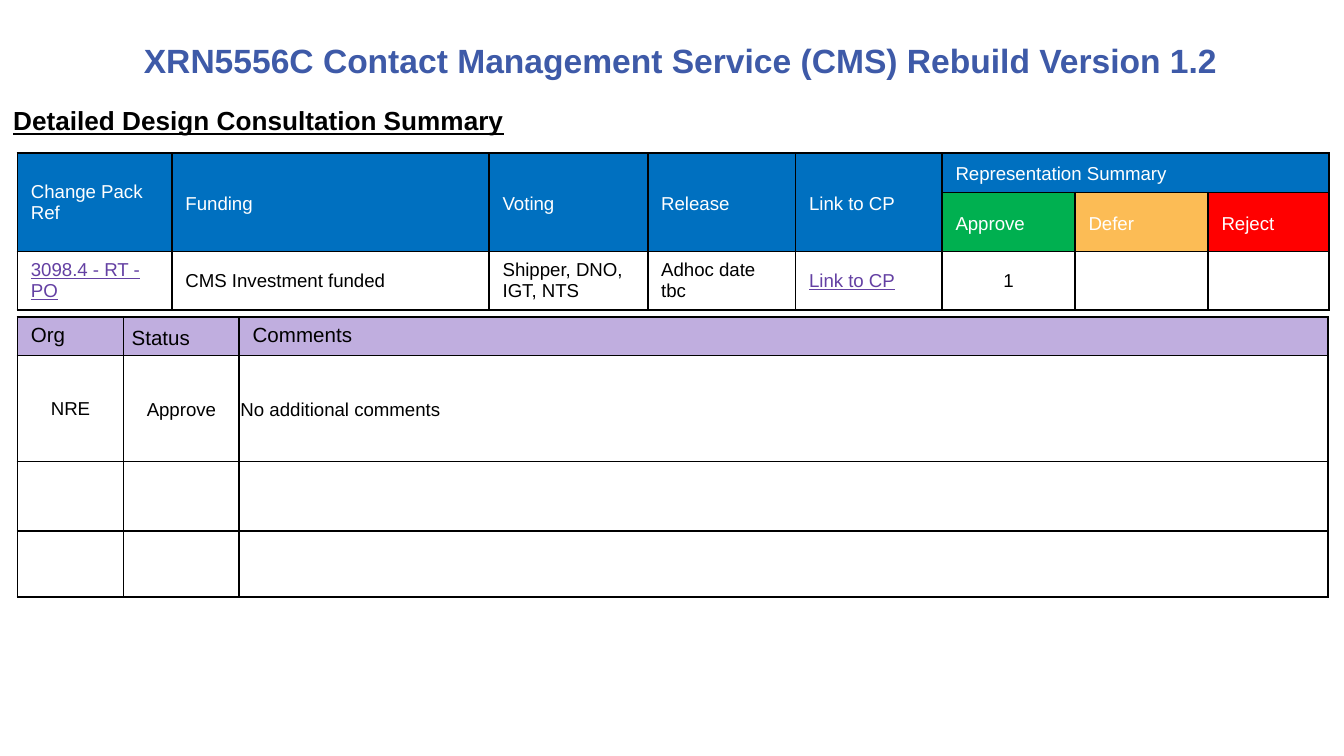
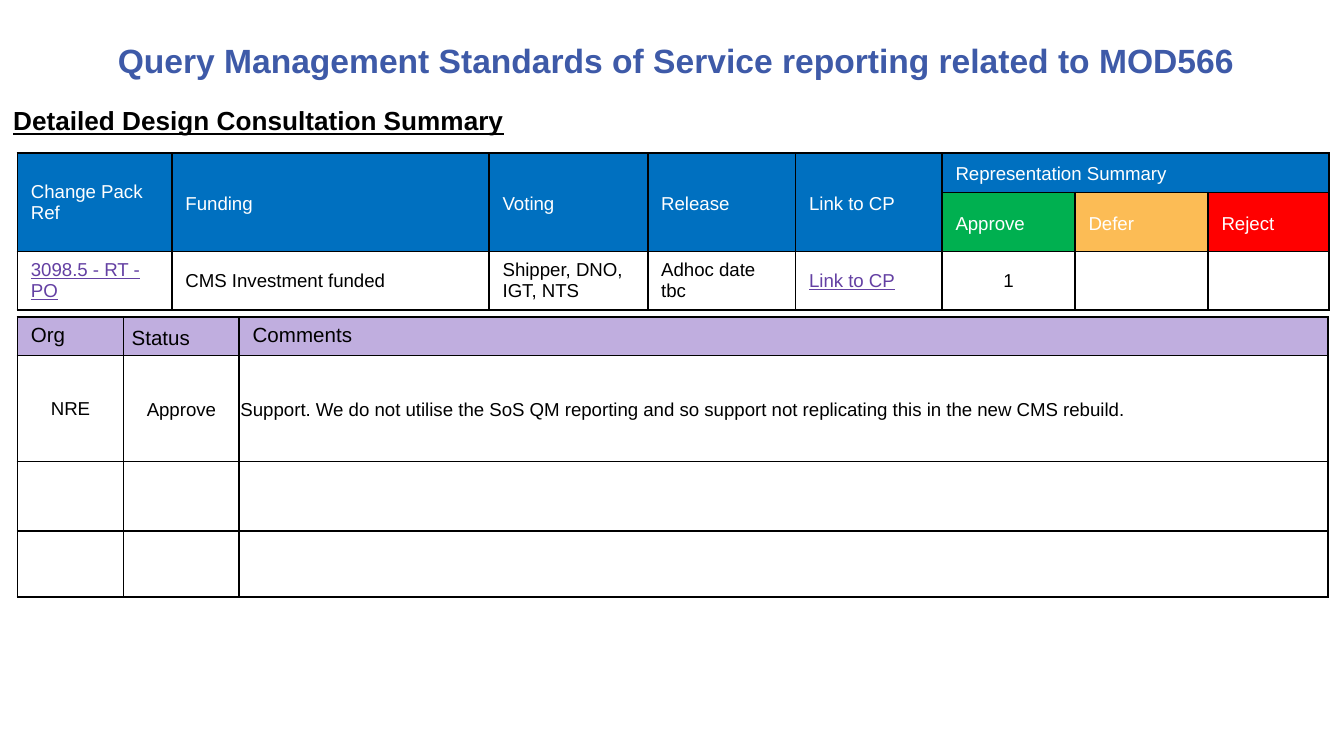
from dataclasses import dataclass, replace
from typing import Any, Optional

from lxml import etree
from pptx import Presentation
from pptx.dml.color import RGBColor
from pptx.enum.text import MSO_ANCHOR, PP_ALIGN
from pptx.oxml.ns import qn
from pptx.util import Inches, Pt

TOP, MID = MSO_ANCHOR.TOP, MSO_ANCHOR.MIDDLE
LEFT, MIDDLE = PP_ALIGN.LEFT, PP_ALIGN.CENTER

# The grid has 100 columns; a row is as high as a column is wide.
WIDE, HIGH = Inches(10), Inches(5.625)
UNIT = WIDE // 100

HEX = {
    "title": "3E5AA8", "ink": "000000", "white": "FFFFFF", "link": "6440A3",
    "head": "0070C0", "yes": "00B050", "wait": "FCBC55", "no": "FF0000",
    "band": "C0AEDF",
}
FONT = "Arial"
SIDES = ("L", "R", "T", "B")
EDGES = ("left", "top", "right", "bottom")
THIN = (0.1, 0.1, 0.1, 0)
SLIM = (0.6, 0, 0.6, 0)


@dataclass(frozen=True)
class Look:
    size: float = 10
    color: str = "ink"
    bold: bool = False
    line: bool = False
    align: Any = LEFT
    lead: float = 1.0
    after: float = 0


@dataclass(frozen=True)
class Cell:
    text: str = ""
    look: Look = Look()
    fill: Optional[str] = None
    pad: tuple = (1, 0.5, 1, 0.5)
    anchor: Any = MID
    span: tuple = (1, 1)


@dataclass(frozen=True)
class Grid:
    left: float
    top: float
    cols: tuple
    rows: tuple


@dataclass(frozen=True)
class Page:
    title: str
    ref: str
    note: str


TITLE = Look(18, "title", bold=True, align=MIDDLE)
SUB = Look(14, bold=True, line=True)
BODY = Look()
MID_TEXT = Look(align=MIDDLE)
LINK = Look(color="link", line=True)
HEAD = Look(color="white", lead=1.15)
LABEL = Look(11)

VOTES = Grid(1.3, 11.4, (11.5, 23.6, 11.8, 11, 10.9, 9.9, 9.9, 9), (2.9, 4.4, 4.3))
NOTES = Grid(1.3, 23.6, (7.9, 8.6, 81), (2.8, 7.9, 5.2, 4.9))

PAGES = (
    Page("XRN5556C Contact Management Service (CMS) Rebuild Version 1.2",
         "3098.4 - RT - PO", "No additional comments"),
    Page("Query Management Standards of Service reporting related to MOD566 ",
         "3098.5 - RT - PO",
         "Support. We do not utilise the SoS QM reporting and so support not "
         "replicating this in the new CMS rebuild."),
)


def units(*nums: float) -> list[int]:
    return [round(n * UNIT) for n in nums]


def apply(item: Any, values: dict) -> None:
    for key, value in values.items():
        setattr(item, key, value)


def write(frame: Any, text: str, look: Look) -> None:
    para = frame.paragraphs[0]
    apply(para, {"alignment": look.align, "line_spacing": look.lead,
                 "space_before": Pt(0), "space_after": Pt(look.after)})
    if not text:
        para._p.get_or_add_endParaRPr().set("sz", str(int(look.size * 100)))
        return
    run = para.add_run()
    run.text = text
    apply(run.font, {"name": FONT, "size": Pt(look.size), "bold": look.bold,
                     "underline": look.line})
    run.font.color.rgb = RGBColor.from_string(HEX[look.color])


def border(cell: Any) -> None:
    props = cell._tc.get_or_add_tcPr()
    for side in SIDES:
        line = etree.SubElement(props, qn(f"a:ln{side}"), w=str(Pt(1)))
        fill = etree.SubElement(line, qn("a:solidFill"))
        etree.SubElement(fill, qn("a:srgbClr"), val=HEX["ink"])


def draw_grid(slide: Any, grid: Grid, cells: dict[tuple[int, int], Cell]) -> None:
    """Draw a ruled table; places missing from cells stay blank."""
    rows, cols = len(grid.rows), len(grid.cols)
    box = units(grid.left, grid.top, sum(grid.cols), sum(grid.rows))
    table = slide.shapes.add_table(rows, cols, *box).table
    apply(table, {"first_row": False, "horz_banding": False})
    for col, width in zip(table.columns, units(*grid.cols)):
        col.width = width
    for row, height in zip(table.rows, units(*grid.rows)):
        row.height = height
    for r in range(rows):
        for c in range(cols):
            item, cell = cells.get((r, c), Cell()), table.cell(r, c)
            border(cell)
            if item.fill:
                cell.fill.solid()
                cell.fill.fore_color.rgb = RGBColor.from_string(HEX[item.fill])
            else:
                cell.fill.background()
            pads = zip(EDGES, units(*item.pad))
            apply(cell, {f"margin_{edge}": pad for edge, pad in pads})
            cell.vertical_anchor = item.anchor
            write(cell.text_frame, item.text, item.look)
    for (r, c), item in cells.items():
        if item.span != (1, 1):
            down, over = item.span
            table.cell(r, c).merge(table.cell(r + down - 1, c + over - 1))


def vote_cells(page: Page) -> dict[tuple[int, int], Cell]:
    names = ("Change Pack Ref", "Funding", "Voting", "Release", "Link to CP")
    cells = {(0, c): Cell(name, HEAD, "head", span=(2, 1))
             for c, name in enumerate(names)}
    cells[0, 0] = replace(cells[0, 0], look=replace(HEAD, lead=1.0))
    cells[0, 5] = Cell("Representation Summary", HEAD, "head", span=(1, 3))
    picks = (("Approve", "yes"), ("Defer", "wait"), ("Reject", "no"))
    for c, (name, fill) in enumerate(picks, 5):
        cells[1, c] = Cell(name, HEAD, fill)
    facts = ((page.ref, LINK), ("CMS Investment funded", BODY),
             ("Shipper, DNO, IGT, NTS", BODY), ("Adhoc date tbc", BODY),
             ("Link to CP", LINK), ("1", MID_TEXT))
    for c, (text, look) in enumerate(facts):
        cells[2, c] = Cell(text, look)
    return cells


def note_cells(page: Page) -> dict[tuple[int, int], Cell]:
    return {
        (0, 0): Cell("Org", LABEL, "band", anchor=TOP),
        (0, 1): Cell("Status", replace(LABEL, lead=1.15), "band", SLIM),
        (0, 2): Cell("Comments", LABEL, "band", anchor=TOP),
        (1, 0): Cell("NRE", MID_TEXT, pad=THIN),
        (1, 1): Cell("Approve", replace(MID_TEXT, lead=1.15), pad=SLIM),
        (1, 2): Cell(page.note, Look(lead=1.15, after=10), pad=THIN),
    }


def draw_heads(slide: Any, page: Page) -> None:
    title = slide.shapes.title
    left, top, width, height = units(1.3, 0, 98.7, 8.9)
    apply(title, {"left": left, "top": top, "width": width, "height": height})
    apply(title.text_frame, {"vertical_anchor": MID, "word_wrap": True})
    write(title.text_frame, page.title, TITLE)
    sub = slide.shapes.add_textbox(*units(0, 7.3, 47.7, 3.4)).text_frame
    sub.word_wrap = True
    write(sub, "Detailed Design Consultation Summary", SUB)


def main() -> None:
    deck = Presentation()
    apply(deck, {"slide_width": WIDE, "slide_height": HIGH})
    for page in PAGES:
        slide = deck.slides.add_slide(deck.slide_layouts.get_by_name("Title Only"))
        draw_heads(slide, page)
        draw_grid(slide, VOTES, vote_cells(page))
        draw_grid(slide, NOTES, note_cells(page))
    deck.save("out.pptx")


if __name__ == "__main__":
    main()
